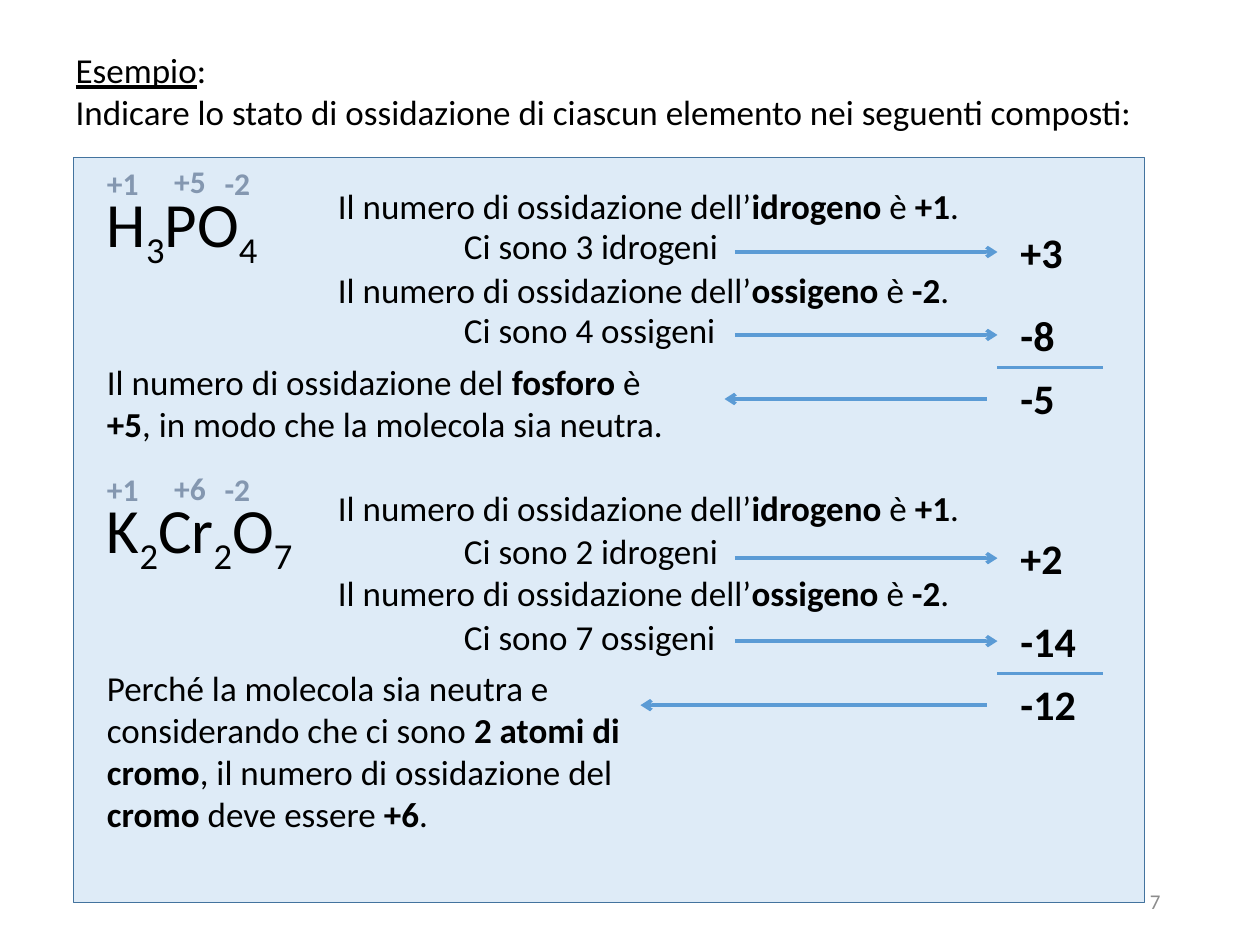
"""Build a slide that works out oxidation states in two compounds."""
from lxml.etree import SubElement
from pptx import Presentation
from pptx.dml.color import RGBColor as Color
from pptx.enum.shapes import MSO_CONNECTOR as Connector, MSO_SHAPE as Shape
from pptx.enum.text import MSO_ANCHOR as Anchor, MSO_AUTO_SIZE as AutoSize, PP_ALIGN as Align
from pptx.oxml.ns import qn
from pptx.util import Inches, Pt

THEME = {
    "font": "Calibri",
    "ink": Color.from_string("000000"),
    "charge": Color.from_string("8497B0"),
    "number": Color.from_string("8C8C8C"),
    "panel": Color.from_string("DEEBF7"),
    "edge": Color.from_string("43739E"),
    "arrow": Color.from_string("5B9BD5"),
    "body": Pt(20),
    "formula": Pt(36),
    "total": Pt(24),
    "label": Pt(18),
    "small": Pt(12),
}
BOLD = {"bold": True}

deck = Presentation()
deck.slide_width, deck.slide_height = Inches(10), Inches(7.5)
CELL = deck.slide_width / 120
page = deck.slides.add_slide(deck.slide_layouts[5])


def write(area, lines, size="body", color="ink", mark=BOLD, align=Align.LEFT,
          anchor=Anchor.TOP, wrap=True, box=None, subscript=False):
    """Write lines in a box placed on the grid; text between asterisks gets the mark."""
    place = [round(CELL * cells) for cells in area]
    box = box or page.shapes.add_textbox(*place)
    box.left, box.top, box.width, box.height = place
    frame = box.text_frame
    layout = {"auto_size": AutoSize.NONE, "word_wrap": wrap, "vertical_anchor": anchor}
    for name, value in layout.items():
        setattr(frame, name, value)
    for index, line in enumerate(lines):
        para = frame.add_paragraph() if index else frame.paragraphs[0]
        para.alignment = align
        for part, text in enumerate(line.split("*")):
            if not text:
                continue
            span = para.add_run()
            span.text = text
            style = {"name": THEME["font"], "size": THEME[size]}
            style.update(mark if part % 2 else {})
            for name, value in style.items():
                setattr(span.font, name, value)
            span.font.color.rgb = THEME[color]
            if subscript and part % 2:
                span.font._element.set("baseline", "-25000")


def draw_line(start, end, arrow=True):
    """Draw a line between two grid points, with an arrowhead at its end if asked."""
    points = [round(CELL * cells) for cells in (*start, *end)]
    line = page.shapes.add_connector(Connector.STRAIGHT, *points)
    line.line.color.rgb = THEME["arrow"]
    line.line.width = Pt(2)
    if arrow:
        SubElement(line.line._get_or_add_ln(), qn("a:tailEnd"), type="arrow")
    SubElement(line._element.spPr, qn("a:effectLst"))


write((6, 4, 109, 10), [
    "*Esempio*:",
    "Indicare lo stato di ossidazione di ciascun elemento nei seguenti composti:",
], mark={"underline": True}, align=Align.JUSTIFY, box=page.shapes.title)

panel = page.shapes.add_shape(Shape.RECTANGLE, *[round(CELL * cells) for cells in (7, 15, 102, 71)])
panel.shadow.inherit = False
panel.fill.solid()
panel.fill.fore_color.rgb = THEME["panel"]
panel.line.color.rgb = THEME["edge"]
panel.line.width = Pt(0.5)

write((84.7, 83.4, 27, 4.8), ["7"], "small", "number", align=Align.RIGHT, anchor=Anchor.MIDDLE)

examples = [
    {
        "top": 15,
        "formula": "H*3*PO*4*",
        "charges": ["+1", "+5", "-2"],
        "counts": ["Ci sono 3 idrogeni", "Ci sono 4 ossigeni"],
        "step_rows": [17, 20.8, 25, 28.8],
        "totals": ["+3", "-8", "-5"],
        "conclusion": "Il numero di ossidazione del *fosforo* è *+5*, "
                      "in modo che la molecola sia neutra.",
        "conclusion_rows": 9.2,
        "return_column": 69,
    },
    {
        "top": 44.16,
        "formula": "K*2*Cr*2*O*7*",
        "charges": ["+1", "+6", "-2"],
        "counts": ["Ci sono 2 idrogeni", "Ci sono 7 ossigeni"],
        "step_rows": [45.7, 49.8, 53.8, 58],
        "totals": ["+2", "-14", "-12"],
        "conclusion": "Perché la molecola sia neutra e considerando che ci sono "
                      "*2 atomi di cromo*, il numero di ossidazione del *cromo* "
                      "deve essere *+6*.",
        "conclusion_rows": 17.4,
        "return_column": 61,
    },
]
rules = [
    "Il numero di ossidazione dell’*idrogeno *è *+1*.",
    "Il numero di ossidazione dell’*ossigeno* è *-2*.",
]

for example in examples:
    top = example["top"]
    write((9, top + 2, 24, 8.5), [example["formula"]], "formula", mark={}, subscript=True)

    for column, rise, width, charge in zip((9, 15.4, 20.2), (0, 0.12, 0), (5.5, 5.5, 4.9),
                                           example["charges"]):
        write((column, top - rise, width, 4.8), [f"*{charge}*"], "label", "charge", wrap=False)

    rows = example["step_rows"]
    for rule, count, rule_row, count_row in zip(rules, example["counts"], rows[::2], rows[1::2]):
        write((31, rule_row, 75, 5.3), [rule])
        write((43, count_row, 63, 5.3), [count])

    for row, total in zip((6, 13.9, 19.9), example["totals"]):
        write((96, top + row, 9, 6), [f"*{total}*"], "total")

    for row in (9, 16.9):
        draw_line((70, top + row), (95, top + row))
    draw_line((95, top + 20), (105, top + 20), arrow=False)
    draw_line((94, top + 23), (example["return_column"], top + 23))

    write((9, top + 18.7, 58, example["conclusion_rows"]), [example["conclusion"]])

deck.save("out.pptx")
